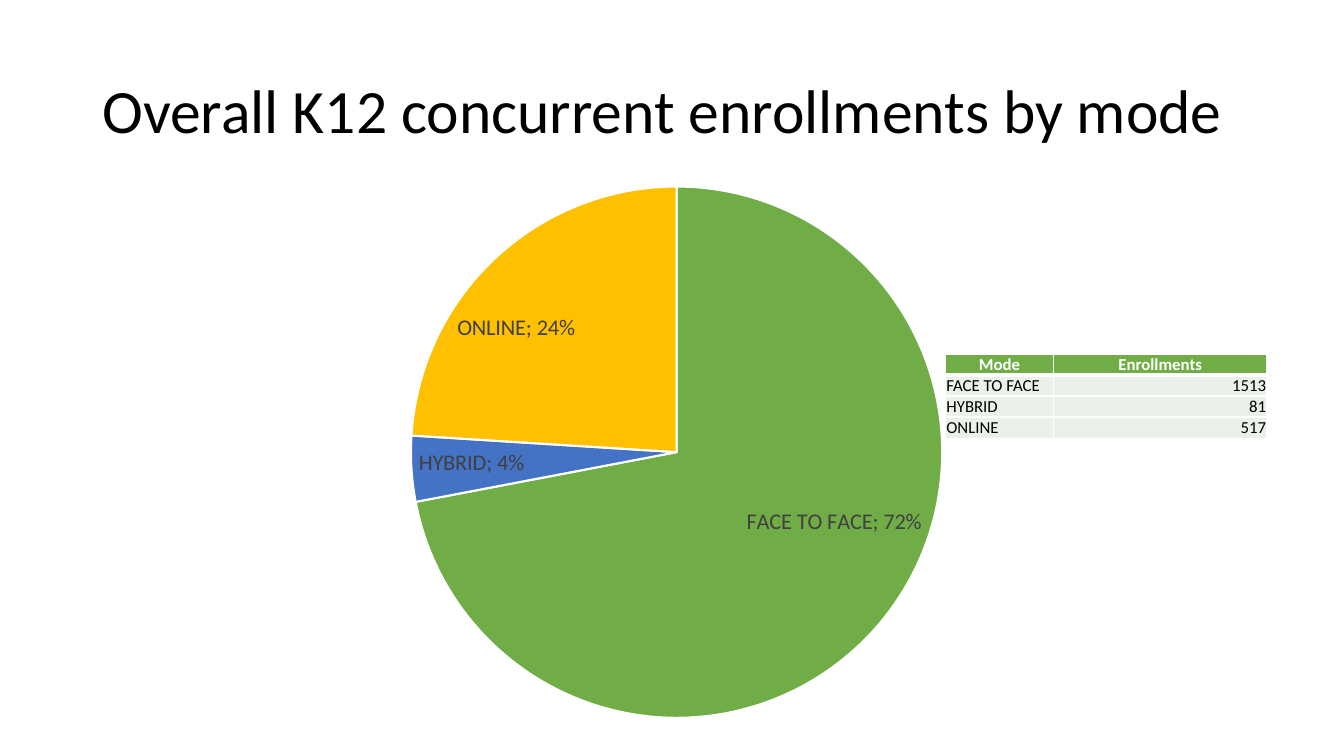
from lxml.etree import SubElement as Sub
from pptx import Presentation
from pptx.chart.data import CategoryChartData as ChartData
from pptx.dml.color import RGBColor as Rgb
from pptx.enum.chart import XL_CHART_TYPE as Kind, XL_LABEL_POSITION as Spot
from pptx.enum.text import MSO_ANCHOR as Anchor, PP_ALIGN as Align
from pptx.oxml import parse_xml
from pptx.oxml.ns import qn, nsdecls
from pptx.util import Cm, Pt

TITLE = "Overall K12 concurrent enrollments by mode"
SHARES = {"FACE TO FACE": 0.72, "HYBRID": 0.04, "ONLINE": 0.24}
ROWS = [
    ("Mode", "Enrollments"),
    ("FACE TO FACE", "1513"),
    ("HYBRID", "81"),
    ("ONLINE", "517"),
]
THEME = {
    "font": "Calibri",
    "black": "000000",
    "white": "FFFFFF",
    "label": "404040",
    "head": "70AD47",
    "body": "EBF1E9",
    "slices": ["70AD47", "4472C4", "FFC000"],
    "title": 44,
    "tag": 16,
    "cell": 12,
}
BOX = {
    "title": (2.33, 1.02, 29.21, 3.68),
    "chart": (4.65, 4.24, 21.95, 14.17),
    "table": (23.83, 8.92, 8.1, 2.12),
}
COLS = (2.72, 5.38)
PLOT = {"x": 0.26, "y": 0.03, "w": 0.61, "h": 0.95}


def place(name):
    return [Cm(n) for n in BOX[name]]


def style(font, size, color, bold=False):
    font.name = THEME["font"]
    font.size = Pt(size)
    font.bold = bold
    font.color.rgb = Rgb.from_string(color)


def write(frame, text, size, color, bold=False, align=Align.LEFT,
          anchor=Anchor.MIDDLE, space=1.0):
    frame.word_wrap = True
    frame.vertical_anchor = anchor
    para = frame.paragraphs[0]
    para.alignment = align
    para.line_spacing = space
    run = para.add_run()
    run.text = text
    style(run.font, size, color, bold)


def edge(cell, base):
    props = cell._tc.get_or_add_tcPr()
    for i, side in enumerate(("lnL", "lnR", "lnT", "lnB")):
        width = base if side == "lnB" else 1
        props.insert(i, parse_xml(
            f'<a:{side} {nsdecls("a")} w="{Pt(width)}"><a:solidFill>'
            f'<a:srgbClr val="{THEME["white"]}"/></a:solidFill></a:{side}>'))


def add_pie(slide):
    data = ChartData(number_format="0%")
    data.categories = list(SHARES)
    data.add_series("Series 1", list(SHARES.values()))
    chart = slide.shapes.add_chart(Kind.PIE, *place("chart"), data).chart
    chart.has_legend = False
    chart.has_title = False
    style(chart.font, THEME["tag"], THEME["black"])
    plot = chart.plots[0]
    plot.vary_by_categories = True
    for i, color in enumerate(THEME["slices"]):
        form = plot.series[0].points[i].format
        form.fill.solid()
        form.fill.fore_color.rgb = Rgb.from_string(color)
        form.line.color.rgb = Rgb.from_string(THEME["white"])
        form.line.width = Pt(1.5)
    tags = plot.series[0].data_labels
    tags.show_value = True
    tags.show_category_name = True
    tags.show_percentage = False
    tags.show_legend_key = False
    tags.number_format = "0%"
    tags.number_format_is_linked = False
    tags.position = Spot.BEST_FIT
    style(tags.font, THEME["tag"], THEME["label"])
    gap = parse_xml(f'<c:separator {nsdecls("c")}>; </c:separator>')
    tags._element.find(qn("c:showBubbleSize")).addnext(gap)
    area = chart._chartSpace.chart.plotArea
    old = area.find(qn("c:layout"))
    if old is not None:
        area.remove(old)
    frame = parse_xml(f'<c:layout {nsdecls("c")}/>')
    area.insert(0, frame)
    manual = Sub(frame, qn("c:manualLayout"))
    Sub(manual, qn("c:layoutTarget")).set("val", "inner")
    for key in "xy":
        Sub(manual, qn(f"c:{key}Mode")).set("val", "edge")
    for key, size in PLOT.items():
        Sub(manual, qn(f"c:{key}")).set("val", str(size))


def add_grid(slide):
    table = slide.shapes.add_table(len(ROWS), len(COLS), *place("table")).table
    for col, width in zip(table.columns, COLS):
        col.width = Cm(width)
    for r, row in enumerate(ROWS):
        head = r == 0
        table.rows[r].height = Cm(BOX["table"][3] / len(ROWS))
        for c, text in enumerate(row):
            cell = table.cell(r, c)
            cell.margin_left = cell.margin_right = cell.margin_top = Cm(0.02)
            cell.margin_bottom = 0
            cell.vertical_anchor = Anchor.BOTTOM
            cell.fill.solid()
            cell.fill.fore_color.rgb = Rgb.from_string(
                THEME["head" if head else "body"])
            edge(cell, 3 if head else 1)
            side = Align.CENTER if head else (Align.LEFT, Align.RIGHT)[c]
            write(cell.text_frame, text, THEME["cell"],
                  THEME["white" if head else "black"], bold=head,
                  align=side, anchor=None)


def main():
    deck = Presentation()
    deck.slide_width, deck.slide_height = Cm(33.87), Cm(19.05)
    slide = deck.slides.add_slide(deck.slide_layouts[6])
    title = slide.shapes.add_textbox(*place("title"))
    write(title.text_frame, TITLE, THEME["title"], THEME["black"], space=0.9)
    add_pie(slide)
    add_grid(slide)
    deck.save("out.pptx")


if __name__ == "__main__":
    main()
